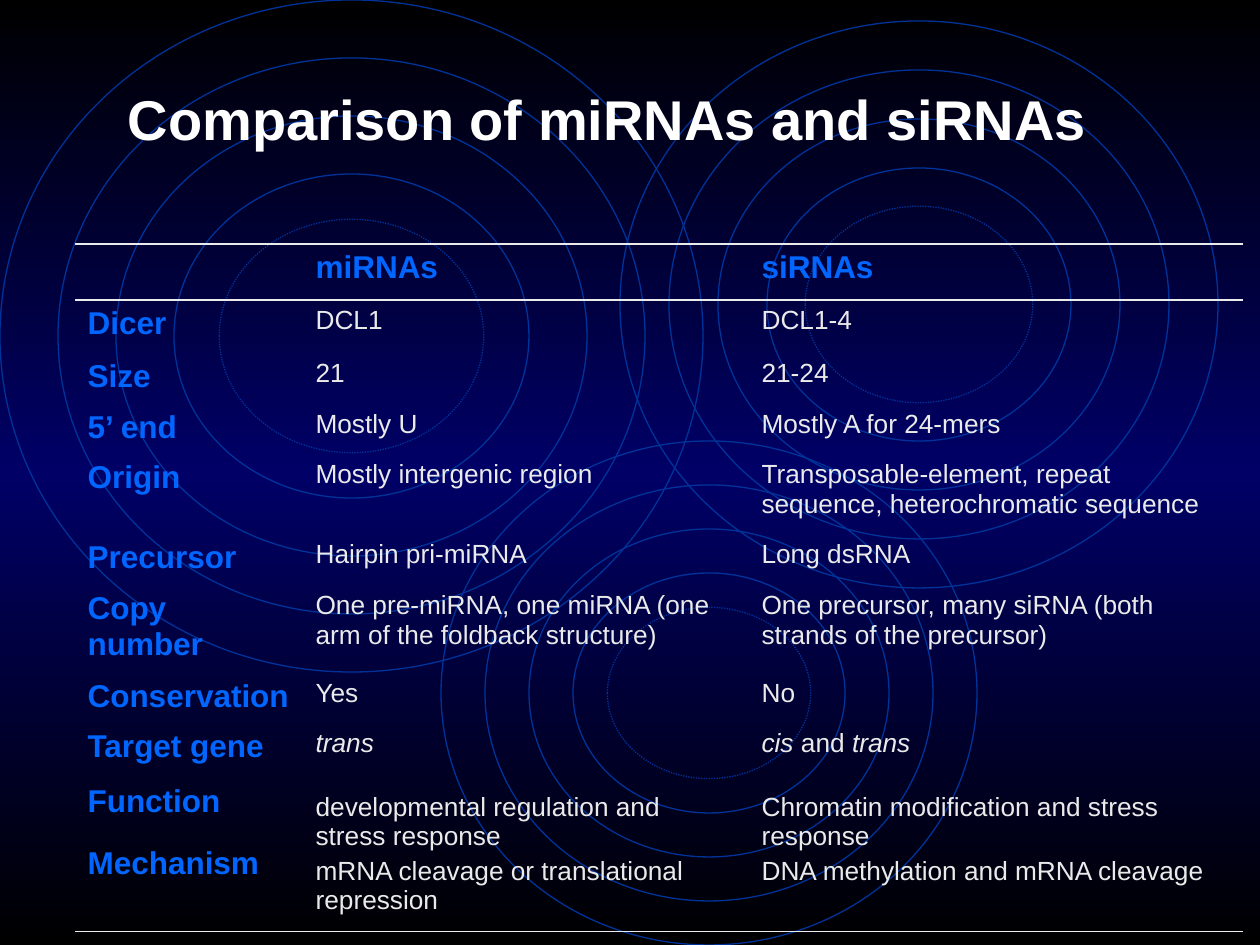
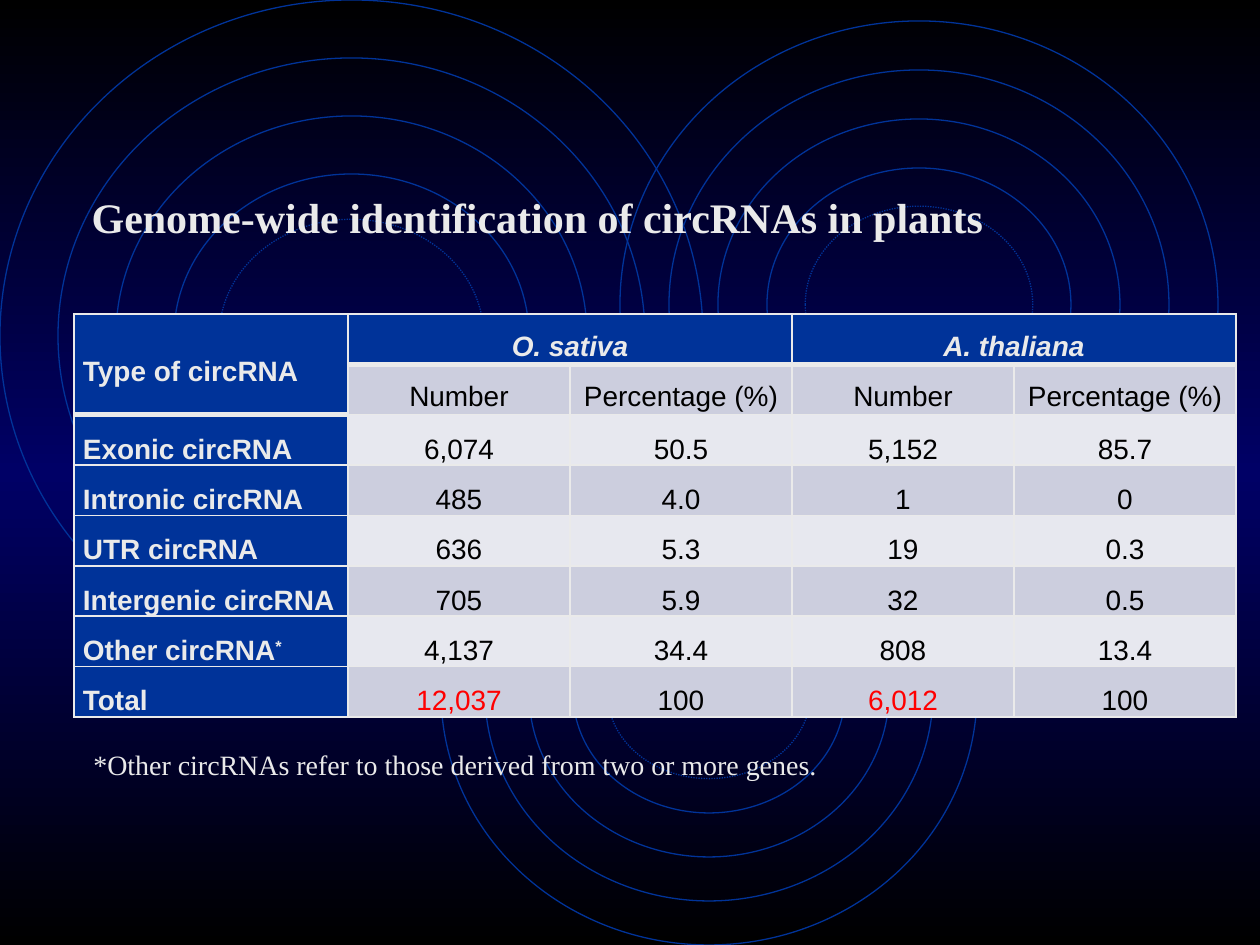
import copy

import lxml.etree
import pptx
import pptx.dml.color
import pptx.enum.dml
import pptx.enum.shapes
import pptx.enum.text
import pptx.oxml.ns
import pptx.util

RGB = pptx.dml.color.RGBColor
ALIGN = pptx.enum.text.PP_ALIGN
ANCHOR = pptx.enum.text.MSO_ANCHOR
FIT = pptx.enum.text.MSO_AUTO_SIZE
Pt = pptx.util.Pt
qn = pptx.oxml.ns.qn

BLACK = RGB(0x00, 0x00, 0x00)
NAVY = RGB(0x00, 0x00, 0x66)
BLUE = RGB(0x00, 0x33, 0x99)
AZURE = RGB(0x00, 0x66, 0xFF)
WHITE = RGB(0xFF, 0xFF, 0xFF)
PALE = RGB(0xEA, 0xEA, 0xEA)
LIGHT = RGB(0xE7, 0xE8, 0xEF)
GREY = RGB(0xCC, 0xCE, 0xDE)
RED = RGB(0xFF, 0x00, 0x00)
SANS, SERIF = "Arial", "Times New Roman"
PLAIN_GRID = "{2D5ABB26-0587-4C30-8999-92F81FD0307C}"

WIDE, HIGH = 1260, 945
# left, top, width, height of the outer ring, then the gap between rings
RINGS = [(0, 0, 703, 672, 58), (441, 441, 536, 504, 44), (620, 21, 598, 567, 49)]
STEPS = [0, 1, 2, 3, 3.78]

# A cell is a list of paragraphs; a paragraph is a list of (text, mark) runs.
I, SUP = "italic", "super"
COMPARE = [
    ("", "miRNAs", "siRNAs"),
    ("Dicer", "DCL1", "DCL1-4"),
    ("Size", "21", "21-24"),
    ("5’ end", "Mostly U", "Mostly A for 24-mers"),
    ("Origin", "Mostly intergenic region",
     "Transposable-element, repeat sequence, heterochromatic sequence"),
    ("Precursor", "Hairpin pri-miRNA", "Long dsRNA"),
    ("Copy number", "One pre-miRNA, one miRNA (one arm of the foldback structure)",
     "One precursor, many siRNA (both strands of the precursor)"),
    ("Conservation", "Yes", "No"),
    ("Target gene", [[("trans", I)]], [[("cis", I), (" and ", ""), ("trans", I)]]),
    ([[("Function", "")], [("Mechanism", "")]],
     [[("developmental regulation and stress response", "")],
      [("mRNA cleavage or translational repression", "")]],
     [[("Chromatin modification and stress response", "")],
      [("DNA methylation and mRNA cleavage", "")]]),
]
COMPARE_COLS = [228, 446, 494]
COMPARE_ROWS = [56, 53, 51, 50, 80, 51, 88, 50, 64, 145]

CIRC = [
    ("Type of circRNA", [[("O. sativa", I)]], "", [[("A. thaliana", I)]], ""),
    ("", "Number", "Percentage (%)", "Number", "Percentage (%)"),
    ("Exonic circRNA", "6,074", "50.5", "5,152", "85.7"),
    ("Intronic circRNA", "485", "4.0", "1", "0"),
    ("UTR circRNA", "636", "5.3", "19", "0.3"),
    ("Intergenic circRNA", "705", "5.9", "32", "0.5"),
    ([[("Other circRNA", ""), ("*", SUP)]], "4,137", "34.4", "808", "13.4"),
    ("Total", "12,037", "100", "6,012", "100"),
]
CIRC_COLS = [274] + [222] * 4
CIRC_HIGH = 403
NOTE = "*Other circRNAs refer to those derived from two or more genes."


def px(n):
    return round(n * 9144000 / WIDE)


def write(frame, text, size, color, name=SANS, bold=False, align=ALIGN.LEFT,
          lead=None, gap=0):
    """Fill a text frame; gap is the space before later paragraphs."""
    paras = [[(text, "")]] if isinstance(text, str) else text
    for i, runs in enumerate(paras):
        para = frame.add_paragraph() if i else frame.paragraphs[0]
        para.alignment = align
        para.space_before = Pt(gap if i else 0)
        if lead:
            para.line_spacing = lead
        para.font.size = Pt(size)
        for words, mark in runs:
            if not words:
                continue
            run = para.add_run()
            run.text = words
            font = run.font
            font.size, font.name, font.bold = Pt(size), name, bold
            font.italic = mark == I
            font.color.rgb = color
            if mark == SUP:
                run._r.get_or_add_rPr().set("baseline", "30000")


def place(shape, left, top, width, height):
    shape.left, shape.top = px(left), px(top)
    shape.width, shape.height = px(width), px(height)


def title(slide, text, box, **style):
    head = slide.shapes.title
    place(head, *box)
    head.text_frame.auto_size = FIT.NONE
    head.text_frame.vertical_anchor = ANCHOR.MIDDLE
    write(head.text_frame, text, bold=True, **style)


def border(cell, **sides):
    """Set the widths, in points, of the sides L, R, T and B; 0 hides one."""
    props = cell._tc.get_or_add_tcPr()
    for side in "LRTB":
        width = sides.get(side, 0)
        line = lxml.etree.SubElement(props, qn("a:ln" + side), w=str(Pt(width)))
        if width:
            fill = lxml.etree.SubElement(line, qn("a:solidFill"))
            lxml.etree.SubElement(fill, qn("a:srgbClr"), val=str(PALE))
        else:
            lxml.etree.SubElement(line, qn("a:noFill"))


def grid(slide, left, top, cols, rows):
    frame = slide.shapes.add_table(len(rows), len(cols), px(left), px(top),
                                   px(sum(cols)), px(sum(rows)))
    table = frame.table
    table._tbl.find(".//" + qn("a:tableStyleId")).text = PLAIN_GRID
    for col, width in zip(table.columns, cols):
        col.width = px(width)
    for row, height in zip(table.rows, rows):
        row.height = px(height)
    return table


def backdrop(deck, slide):
    """Give the master its gradient and rings, drawn first on the slide."""
    master = deck.slide_master
    fill = master.background.fill
    fill.gradient()
    fill.gradient_angle = 270
    stops = master.element.find(".//" + qn("a:gsLst"))
    stops.append(copy.deepcopy(stops[-1]))
    for stop, place_at, color in zip(fill.gradient_stops, (0, 0.5, 1), (BLACK, NAVY, BLACK)):
        stop.position = place_at
        stop.color.rgb = color
    spots = [(box, step) for box in RINGS for step in STEPS]
    for i, ((left, top, width, height, gap), step) in enumerate(spots):
        inset = gap * step
        ring = slide.shapes.add_shape(
            pptx.enum.shapes.MSO_SHAPE.OVAL, px(left + inset), px(top + inset),
            px(width - 2 * inset), px(height - 2 * inset))
        ring.shadow.inherit = False
        ring.fill.background()
        ring.line.color.rgb = BLUE
        ring.line.width = Pt(0.75)
        if step == STEPS[-1]:
            ring.line.dash_style = pptx.enum.dml.MSO_LINE.ROUND_DOT
        ring.element.find(".//" + qn("p:cNvPr")).set("id", str(100 + i))
        master.shapes.element.insert(2 + i, ring.element)


def compare(slide):
    title(slide, "Comparison of miRNAs and siRNAs", (95, 50, 1025, 136),
          size=32, color=WHITE, align=ALIGN.CENTER)
    table = grid(slide, 75, 244, COMPARE_COLS, COMPARE_ROWS)
    last = len(COMPARE) - 1
    for r, row in enumerate(COMPARE):
        for c, text in enumerate(row):
            cell = table.cell(r, c)
            border(cell, T=int(r < 2), B=int(r in (0, last)))
            cell.fill.background()
            label = r == 0 or c == 0
            tight = r == last and c == 0
            write(cell.text_frame, text, 18 if label else 15,
                  AZURE if label else PALE, bold=label,
                  lead=0.7 if tight else None, gap=21 if tight else 3)


def circ(slide):
    title(slide, "Genome-wide identification of circRNAs in plants",
          (79, 185, 1081, 63), size=24, color=PALE, name=SERIF)
    count = len(CIRC)
    table = grid(slide, 74, 314, CIRC_COLS, [CIRC_HIGH / count] * count)
    for r, row in enumerate(CIRC):
        for c, text in enumerate(row):
            cell = table.cell(r, c)
            head = r == 0 or c == 0
            split = 1 if c == 0 else 0
            border(cell, L=1, R=1, T=3 if r == split + 1 else 1,
                   B=3 if r <= split else 1)
            cell.fill.solid()
            cell.fill.fore_color.rgb = BLUE if head else GREY if r % 2 else LIGHT
            cell.margin_left = cell.margin_right = px(9)
            cell.margin_top = cell.margin_bottom = 0
            cell.vertical_anchor = ANCHOR.MIDDLE if r < 2 else ANCHOR.BOTTOM
            total = r == count - 1 and c in (1, 3)
            write(cell.text_frame, text, 16, PALE if head else RED if total else BLACK,
                  bold=head, align=ALIGN.CENTER if c else ALIGN.LEFT, lead=1.5)
    for start, end in [((0, 0), (1, 0)), ((0, 1), (0, 2)), ((0, 3), (0, 4))]:
        table.cell(*start).merge(table.cell(*end))
    note = slide.shapes.add_textbox(px(81), px(741), px(1135), px(47)).text_frame
    note.word_wrap = True
    note.auto_size = FIT.SHAPE_TO_FIT_TEXT
    write(note, NOTE, 16, PALE, SERIF)


def main():
    deck = pptx.Presentation()
    deck.slide_width, deck.slide_height = px(WIDE), px(HIGH)
    first, second = [deck.slides.add_slide(deck.slide_layouts[5]) for _ in range(2)]
    backdrop(deck, first)
    compare(first)
    circ(second)
    deck.save("out.pptx")


if __name__ == "__main__":
    main()
